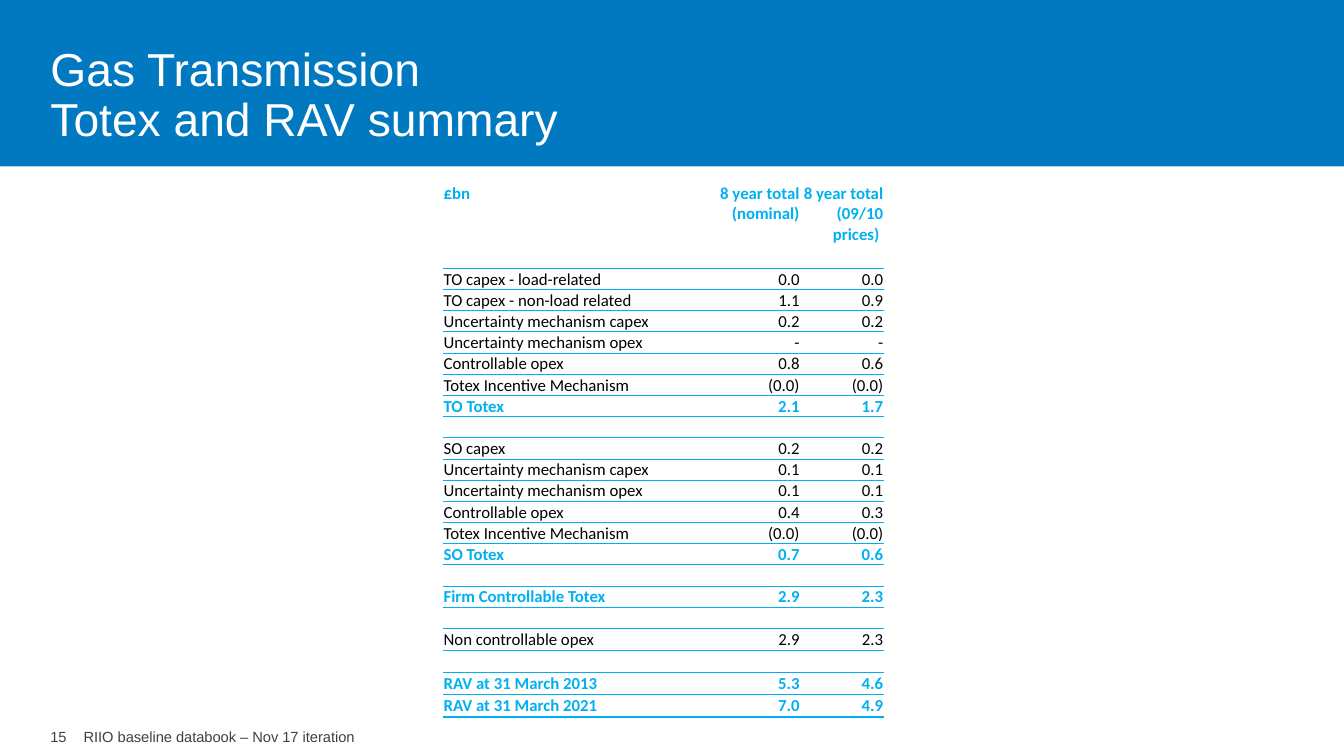
from dataclasses import dataclass
from typing import Any

from lxml import etree
from pptx import Presentation
from pptx.dml.color import RGBColor
from pptx.enum import shapes, text
from pptx.oxml import ns
from pptx.util import Inches, Pt

BAND_BLUE = RGBColor(0x00, 0x79, 0xC1)
ACCENT = RGBColor(0x00, 0xB0, 0xF0)
BLACK = RGBColor(0, 0, 0)
WHITE = RGBColor(0xFF, 0xFF, 0xFF)
GREY = RGBColor(0x40, 0x40, 0x40)

TABLE_SIZE = 12
COLUMN_WIDTHS = (2.72, 0.83, 0.83)
HEADER_HEIGHT, ROW_HEIGHT, LAST_ROW_HEIGHT = 0.85, 0.21, 0.22
FIRST_HEAVY_ROW = 18  # from here down the rules are 1 pt


@dataclass(frozen=True)
class Line:
    label: str = ""
    nominal: str = ""
    real: str = ""
    strong: bool = False


@dataclass(frozen=True)
class Footer:
    wording: str
    left: float
    width: float


LINES = (
    Line("£bn", "8 year total (nominal)", "8 year total (09/10 prices) ", True),
    Line("TO capex - load-related", "0.0", "0.0"),
    Line("TO capex - non-load related", "1.1", "0.9"),
    Line("Uncertainty mechanism capex", "0.2", "0.2"),
    Line("Uncertainty mechanism opex", "-", "-"),
    Line("Controllable opex", "0.8", "0.6"),
    Line("Totex Incentive Mechanism", "(0.0)", "(0.0)"),
    Line("TO Totex", "2.1", "1.7", True),
    Line(),
    Line("SO capex", "0.2", "0.2"),
    Line("Uncertainty mechanism capex", "0.1", "0.1"),
    Line("Uncertainty mechanism opex", "0.1", "0.1"),
    Line("Controllable opex", "0.4", "0.3"),
    Line("Totex Incentive Mechanism", "(0.0)", "(0.0)"),
    Line("SO Totex", "0.7", "0.6", True),
    Line(),
    Line("Firm Controllable Totex", "2.9", "2.3", True),
    Line(),
    Line("Non controllable opex", "2.9", "2.3"),
    Line(),
    Line("RAV at 31 March 2013", "5.3", "4.6", True),
    Line("RAV at 31 March 2021", "7.0", "4.9", True),
)

FOOTERS = (
    Footer("15", 0.5, 0.17),
    Footer("RIIO baseline databook – Nov 17 iteration", 0.83, 3.06),
)


def apply(target: Any, formats: dict[str, Any]) -> None:
    for name, value in formats.items():
        setattr(target, name, value)


def write(para: Any, wording: str, font: str, size: float,
          color: RGBColor, bold: bool = False) -> None:
    # A line break inside the wording stays within the paragraph
    for index, part in enumerate(wording.split("\n")):
        if index:
            para.add_line_break()
        span = para.add_run()
        span.text = part
        apply(span.font, {"name": font, "size": Pt(size), "bold": bold})
        span.font.color.rgb = color


def clear_margins(frame: Any) -> None:
    apply(frame, {"margin_left": 0, "margin_right": 0, "margin_top": 0,
                  "margin_bottom": 0, "word_wrap": False})


def add_title(page: Any) -> None:
    title = page.shapes.title
    apply(title, {"left": Inches(0.5), "top": Inches(0.45),
                  "width": Inches(5.21), "height": Inches(1)})
    clear_margins(title.text_frame)
    title.text_frame.vertical_anchor = text.MSO_ANCHOR.BOTTOM
    para = title.text_frame.paragraphs[0]
    apply(para, {"alignment": text.PP_ALIGN.LEFT, "line_spacing": 0.9})
    write(para, "Gas Transmission\nTotex and RAV summary", "Arial", 33, WHITE)

    # Blue band behind the title
    band = page.shapes.add_shape(shapes.MSO_SHAPE.RECTANGLE, 0, 0,
                                 Inches(13.33), Inches(1.65))
    band.shadow.inherit = False
    band.fill.solid()
    band.fill.fore_color.rgb = BAND_BLUE
    band.line.fill.background()
    title.element.addprevious(band.element)


def add_footer(page: Any, footer: Footer) -> None:
    box = page.shapes.add_textbox(Inches(footer.left), Inches(7.22),
                                  Inches(footer.width), Inches(0.18))
    clear_margins(box.text_frame)
    write(box.text_frame.paragraphs[0], footer.wording, "Arial", 10.5, GREY)


def rule_width(row: int) -> float:
    """Width of the rule under a row; zero means no rule."""
    if row < 0:
        return 0
    return 1 if row == 0 or row >= FIRST_HEAVY_ROW else 0.5


def set_borders(cell: Any, row: int) -> None:
    properties = cell._tc.get_or_add_tcPr()
    widths = {"L": 0, "R": 0, "T": rule_width(row - 1), "B": rule_width(row)}
    for index, (side, width) in enumerate(widths.items()):
        border = etree.Element(ns.qn(f"a:ln{side}"), w=str(int(Pt(width))))
        if width:
            fill = etree.SubElement(border, ns.qn("a:solidFill"))
            etree.SubElement(fill, ns.qn("a:srgbClr"), val=str(ACCENT))
        else:
            etree.SubElement(border, ns.qn("a:noFill"))
        properties.insert(index, border)


def fill_cell(cell: Any, wording: str, row: int, column: int, strong: bool) -> None:
    apply(cell, {"margin_left": Inches(0.01), "margin_right": Inches(0.01),
                 "margin_top": Inches(0.01), "margin_bottom": 0,
                 "vertical_anchor": text.MSO_ANCHOR.TOP})
    cell.fill.solid()
    cell.fill.fore_color.rgb = WHITE
    set_borders(cell, row)
    para = cell.text_frame.paragraphs[0]
    para.alignment = text.PP_ALIGN.RIGHT if column else text.PP_ALIGN.LEFT
    if wording:
        write(para, wording, "Calibri", TABLE_SIZE, ACCENT if strong else BLACK, strong)
    else:  # keeps a spacer row as low as the others
        end = etree.SubElement(para._p, ns.qn("a:endParaRPr"), sz=str(TABLE_SIZE * 100))
        etree.SubElement(end, ns.qn("a:latin"), typeface="Calibri")


def add_summary_table(page: Any) -> None:
    table = page.shapes.add_table(len(LINES), len(COLUMN_WIDTHS), Inches(4.39),
                                  Inches(1.81), Inches(4.38), Inches(5.31)).table
    apply(table, {"first_row": False, "horz_banding": False})
    for column, width in zip(table.columns, COLUMN_WIDTHS):
        column.width = Inches(width)
    for row, line in enumerate(LINES):
        height = LAST_ROW_HEIGHT if row >= FIRST_HEAVY_ROW else ROW_HEIGHT
        table.rows[row].height = Inches(height if row else HEADER_HEIGHT)
        for column, wording in enumerate((line.label, line.nominal, line.real)):
            fill_cell(table.cell(row, column), wording, row, column, line.strong)


def main() -> None:
    deck = Presentation()
    apply(deck, {"slide_width": Inches(13.33), "slide_height": Inches(7.5)})
    page = deck.slides.add_slide(deck.slide_layouts[5])
    add_title(page)
    for footer in FOOTERS:
        add_footer(page, footer)
    add_summary_table(page)
    deck.save("out.pptx")


if __name__ == "__main__":
    main()
